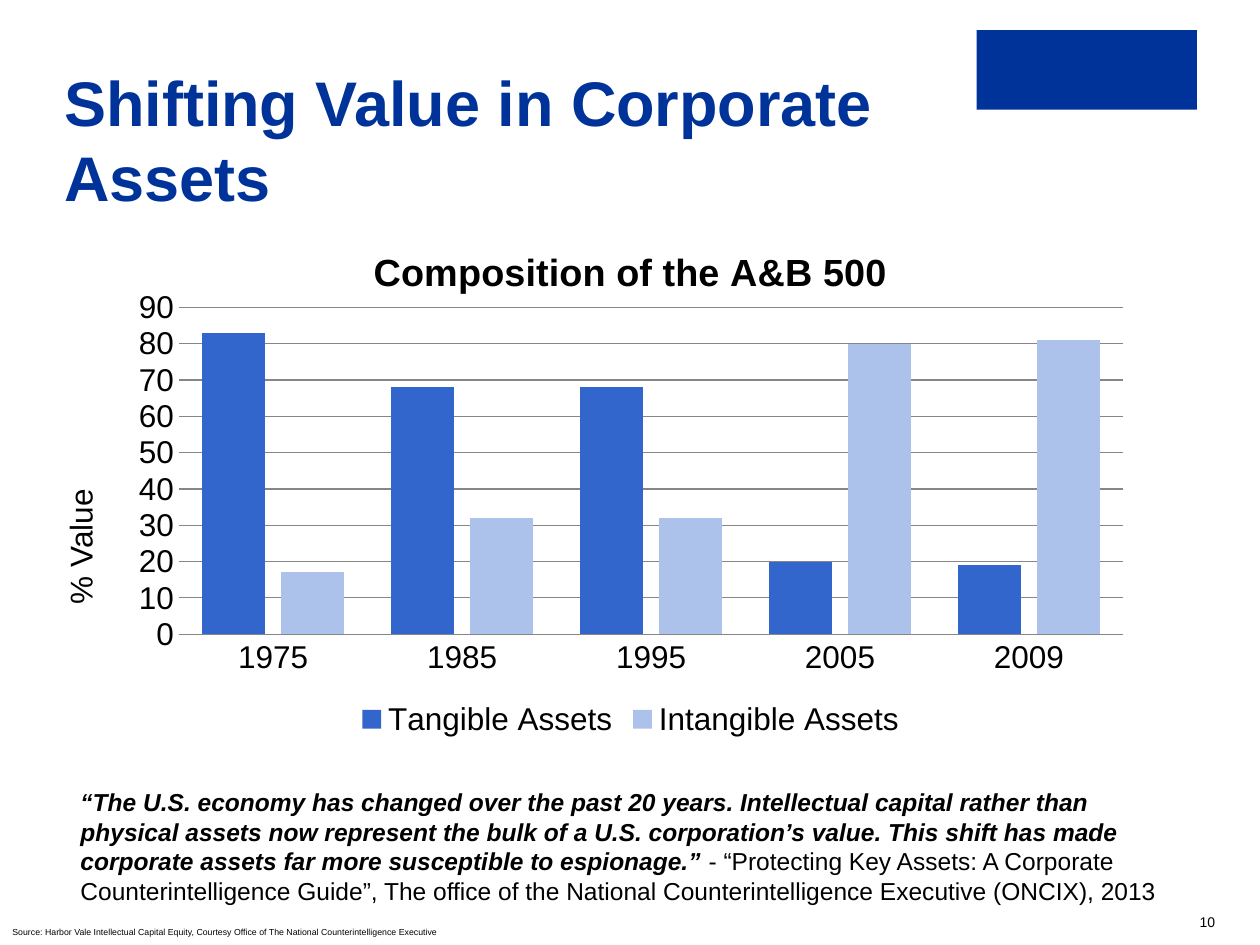
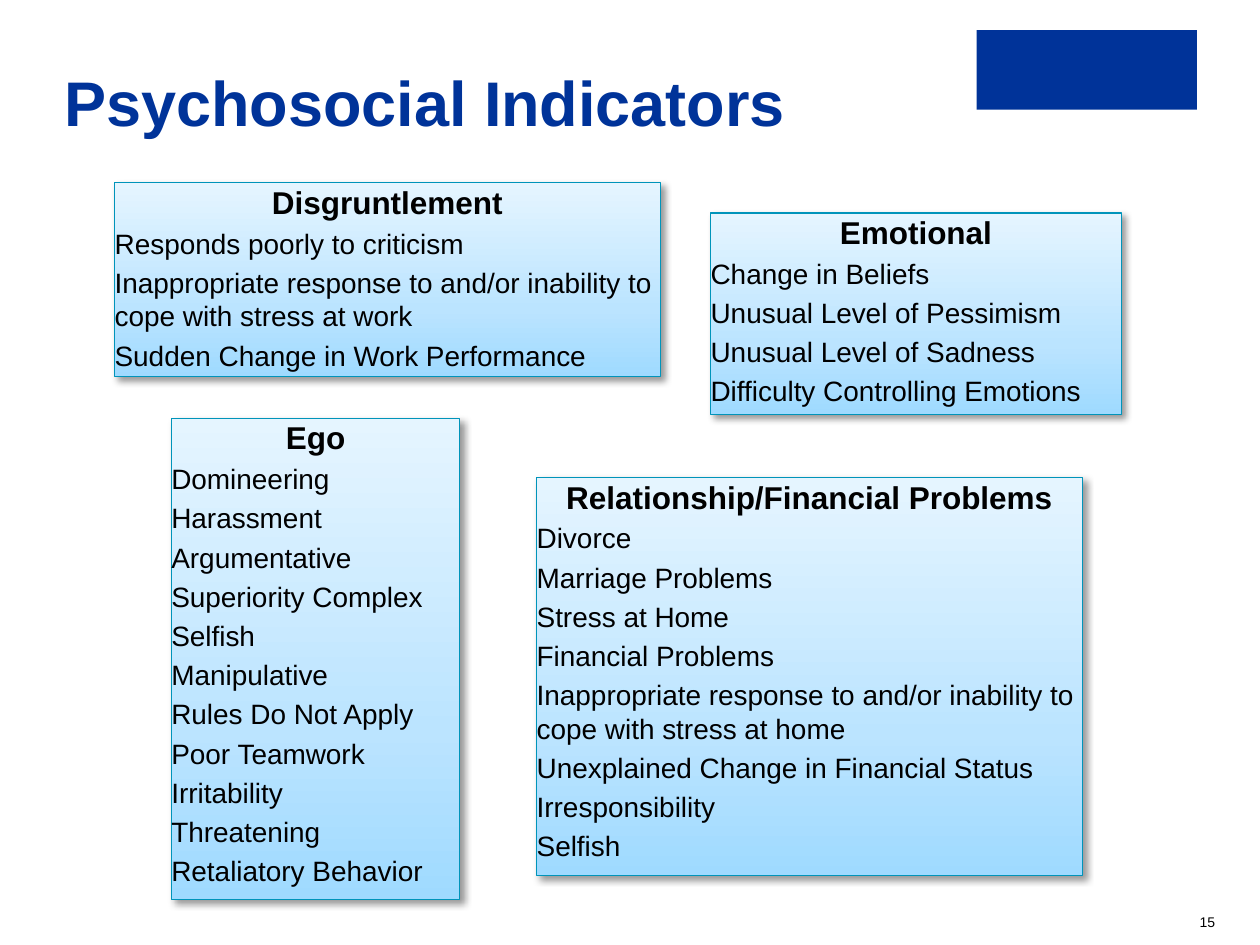
from copy import deepcopy
from dataclasses import dataclass

from lxml import etree
from pptx import Presentation
from pptx import util as u
from pptx.chart.data import CategoryChartData
from pptx.dml.color import RGBColor
from pptx.enum import chart as charts, shapes, text
from pptx.oxml import parse_xml
from pptx.oxml.ns import nsdecls, qn

TITLE_ONLY, TITLE_AND_BODY = 5, 1


@dataclass(frozen=True)
class Theme:
    font: str = "Arial"
    ink: str = "000000"
    brand: str = "003399"
    grid: str = "868686"
    series: tuple[str, ...] = ("3366CC", "ADC2EB")
    panel_line: str = "0094BA"
    panel_stops: tuple[tuple[float, str], ...] = ((0, "9FDAFF"), (0.35, "BBE4FF"), (1, "E5F5FF"))
    title: float = 36
    chart_title: float = 21.6
    heading: float = 18
    item: float = 16
    quote: float = 14
    number: float = 8
    source: float = 5


THEME = Theme()


@dataclass(frozen=True)
class Box:
    left: float
    top: float
    width: float
    height: float

    def lengths(self) -> tuple[u.Length, ...]:
        return tuple(u.Inches(n) for n in (self.left, self.top, self.width, self.height))


@dataclass(frozen=True)
class Panel:
    heading: str
    items: tuple[str, ...]
    box: Box


TITLE_BOX = Box(0.51, 0.5, 8, 0.58)
EMBLEM_BOX = Box(7.75, 0.24, 1.75, 0.63)
NUMBER_BOX = Box(9.52, 7.25, 0.48, 0.25)
CHART_BOX = Box(0.93, 1.78, 8.15, 4.12)
AXIS_LABEL_BOX = Box(-0.47, 4.14, 2.21, 0.4)
SOURCE_BOX = Box(0, 7.31, 4.83, 0.19)
QUOTE_BOX = Box(0.54, 6.2, 8.91, 1.04)

YEARS = ("1975", "1985", "1995", "2005", "2009")
ASSETS = {
    "Tangible Assets": (83, 68, 68, 20, 19),
    "Intangible Assets": (17, 32, 32, 80, 81),
}
QUOTE = (
    "“The U.S. economy has changed over the past 20 years. Intellectual capital rather than "
    "physical assets now represent the bulk of a U.S. corporation’s value. This shift has made "
    "corporate assets far more susceptible to espionage.” "
)
CITATION = (
    "- “Protecting Key Assets: A Corporate Counterintelligence Guide”, The office of the "
    "National Counterintelligence Executive (ONCIX), 2013"
)
SOURCE = (
    "Source: Harbor Vale Intellectual Capital Equity, Courtesy Office of "
    "The National Counterintelligence Executive"
)

DISGRUNTLEMENT = Panel(
    "Disgruntlement",
    (
        "Responds poorly to criticism",
        "Inappropriate response to and/or inability to cope with stress at work",
        "Sudden Change in Work Performance",
    ),
    Box(0.91, 1.45, 4.33, 1.54),
)
OTHER_PANELS = (
    Panel(
        "Ego",
        (
            "Domineering", "Harassment", "Argumentative", "Superiority Complex", "Selfish",
            "Manipulative", "Rules Do Not Apply", "Poor Teamwork", "Irritability",
            "Threatening", "Retaliatory Behavior",
        ),
        Box(1.36, 3.32, 2.29, 3.82),
    ),
    Panel(
        "Emotional",
        (
            "Change in Beliefs", "Unusual Level of Pessimism", "Unusual Level of Sadness",
            "Difficulty Controlling Emotions",
        ),
        Box(5.64, 1.69, 3.26, 1.6),
    ),
    Panel(
        "Relationship/Financial Problems",
        (
            "Divorce", "Marriage Problems", "Stress at Home", "Financial Problems",
            "Inappropriate response to and/or inability to cope with stress at home",
            "Unexplained Change in Financial Status", "Irresponsibility", "Selfish",
        ),
        Box(4.26, 3.79, 4.33, 3.16),
    ),
)


def rgb(color: str) -> RGBColor:
    return RGBColor.from_string(color)


def set_font(font, size: float, color: str = THEME.ink, bold: bool = False,
             italic: bool = False) -> None:
    font.name, font.size = THEME.font, u.Pt(size)
    font.bold, font.italic = bold, italic
    font.color.rgb = rgb(color)


def write(paragraph, words: str, *, align=text.PP_ALIGN.LEFT, **font_format) -> None:
    """Add one formatted run to the paragraph."""
    paragraph.alignment = align
    run = paragraph.add_run()
    run.text = words
    set_font(run.font, **font_format)


def prepare_frame(shape, inset: bool = False):
    """Return the shape's text frame, wrapped, top-anchored and of fixed size."""
    frame = shape.text_frame
    frame.word_wrap = True
    frame.auto_size = text.MSO_AUTO_SIZE.NONE
    frame.vertical_anchor = text.MSO_ANCHOR.TOP
    if not inset:
        frame.margin_left = frame.margin_top = frame.margin_right = frame.margin_bottom = 0
    return frame


def place(shape, box: Box) -> None:
    shape.left, shape.top, shape.width, shape.height = box.lengths()


def add_text(slide, box: Box, words: str, *, inset: bool = True, rotation: float = 0,
             **text_format):
    """Add a text box and return its first paragraph."""
    shape = slide.shapes.add_textbox(*box.lengths())
    shape.rotation = rotation
    paragraph = prepare_frame(shape, inset).paragraphs[0]
    write(paragraph, words, **text_format)
    return paragraph


def add_slide(presentation, layout: int, title: str, number: int):
    """Add a slide with the shared title, emblem and slide number."""
    slide = presentation.slides.add_slide(presentation.slide_layouts[layout])
    place(slide.shapes.title, TITLE_BOX)
    write(prepare_frame(slide.shapes.title).paragraphs[0], title,
          size=THEME.title, color=THEME.brand, bold=True)
    emblem = slide.shapes.add_shape(shapes.MSO_SHAPE.RECTANGLE, *EMBLEM_BOX.lengths())
    emblem.shadow.inherit = False
    emblem.fill.solid()
    emblem.fill.fore_color.rgb = rgb(THEME.brand)
    emblem.line.fill.background()
    add_text(slide, NUMBER_BOX, str(number), inset=False, size=THEME.number)
    return slide


def set_plot_area(chart, **fractions: float) -> None:
    """Fix the inner plot area, as fractions (x, y, w, h) of the chart."""
    plot_area = chart._chartSpace.chart.plotArea
    for layout in plot_area.findall(qn("c:layout")):
        plot_area.remove(layout)
    sizes = "".join(f'<c:{key} val="{value}"/>' for key, value in fractions.items())
    plot_area.insert(0, parse_xml(
        f'<c:layout {nsdecls("c")}><c:manualLayout><c:layoutTarget val="inner"/>'
        f'<c:xMode val="edge"/><c:yMode val="edge"/>{sizes}</c:manualLayout></c:layout>'))


def add_asset_chart(slide) -> None:
    data = CategoryChartData()
    data.categories = YEARS
    for name, values in ASSETS.items():
        data.add_series(name, values)
    chart = slide.shapes.add_chart(
        charts.XL_CHART_TYPE.COLUMN_CLUSTERED, *CHART_BOX.lengths(), data).chart
    set_font(chart.font, THEME.heading)

    chart.has_title = True
    write(chart.chart_title.text_frame.paragraphs[0], "Composition of the A&B 500",
          align=text.PP_ALIGN.CENTER, size=THEME.chart_title, bold=True)
    chart.chart_title.include_in_layout = False
    chart.has_legend = True
    chart.legend.position = charts.XL_LEGEND_POSITION.BOTTOM
    chart.legend.include_in_layout = False

    plot = chart.plots[0]
    plot.gap_width, plot.overlap, plot.vary_by_categories = 75, -25, False
    for series, color in zip(plot.series, THEME.series):
        series.format.fill.solid()
        series.format.fill.fore_color.rgb = rgb(color)

    value_axis, category_axis = chart.value_axis, chart.category_axis
    for axis in (value_axis, category_axis):
        axis.major_tick_mark = axis.minor_tick_mark = charts.XL_TICK_MARK.NONE
    value_axis.minimum_scale, value_axis.maximum_scale, value_axis.major_unit = 0, 90, 10
    value_axis.format.line.fill.background()
    value_axis.has_major_gridlines = True
    for line in (value_axis.major_gridlines.format.line, category_axis.format.line):
        line.color.rgb = rgb(THEME.grid)
        line.width = u.Pt(0.75)
    set_plot_area(chart, x=0.06, y=0.16, w=0.92, h=0.63)


def style_panel(shape) -> None:
    """Give the shape the gradient, outline and soft shadow of a panel."""
    shape.line.color.rgb = rgb(THEME.panel_line)
    shape.line.width = u.Pt(0.75)
    shape.fill.gradient()
    shape.fill.gradient_angle = 90
    stop_list = shape._element.spPr.find(".//" + qn("a:gsLst"))
    stop_list.append(deepcopy(stop_list[0]))
    for stop, (position, color) in zip(shape.fill.gradient_stops, THEME.panel_stops):
        stop.position = position
        stop.color.rgb = rgb(color)
    shape.shadow.inherit = False
    shape._element.spPr.find(qn("a:effectLst")).append(parse_xml(
        f'<a:outerShdw {nsdecls("a")} blurRad="{u.Pt(4)}" dist="{u.Pt(3)}" dir="2700000" '
        f'rotWithShape="0"><a:srgbClr val="{THEME.ink}"><a:alpha val="40000"/></a:srgbClr>'
        '</a:outerShdw>'))


def fill_panel(shape, panel: Panel) -> None:
    place(shape, panel.box)
    style_panel(shape)
    frame = prepare_frame(shape)
    for index, words in enumerate((panel.heading, *panel.items)):
        is_heading = index == 0
        paragraph = frame.paragraphs[0] if is_heading else frame.add_paragraph()
        size = THEME.heading if is_heading else THEME.item
        write(paragraph, words, size=size, bold=is_heading,
              align=text.PP_ALIGN.CENTER if is_heading else text.PP_ALIGN.LEFT)
        paragraph.space_before = u.Pt(0.2 * size)
        properties = paragraph._p.get_or_add_pPr()
        properties.set("marL", "0")
        properties.set("indent", "0")
        etree.SubElement(properties, qn("a:buNone"))


def build_asset_slide(presentation) -> None:
    slide = add_slide(presentation, TITLE_ONLY, "Shifting Value in Corporate Assets", 10)
    add_asset_chart(slide)
    add_text(slide, AXIS_LABEL_BOX, "% Value", rotation=270,
             align=text.PP_ALIGN.CENTER, size=THEME.heading)
    add_text(slide, SOURCE_BOX, SOURCE, size=THEME.source)
    quote = add_text(slide, QUOTE_BOX, QUOTE, size=THEME.quote, bold=True, italic=True)
    write(quote, CITATION, size=THEME.quote)


def build_indicator_slide(presentation) -> None:
    slide = add_slide(presentation, TITLE_AND_BODY, "Psychosocial Indicators", 15)
    fill_panel(slide.placeholders[1], DISGRUNTLEMENT)
    for panel in OTHER_PANELS:
        shape = slide.shapes.add_shape(shapes.MSO_SHAPE.RECTANGLE, *panel.box.lengths())
        fill_panel(shape, panel)


def main() -> None:
    presentation = Presentation()
    presentation.slide_width, presentation.slide_height = u.Inches(10), u.Inches(7.5)
    build_asset_slide(presentation)
    build_indicator_slide(presentation)
    presentation.save("out.pptx")


if __name__ == "__main__":
    main()
